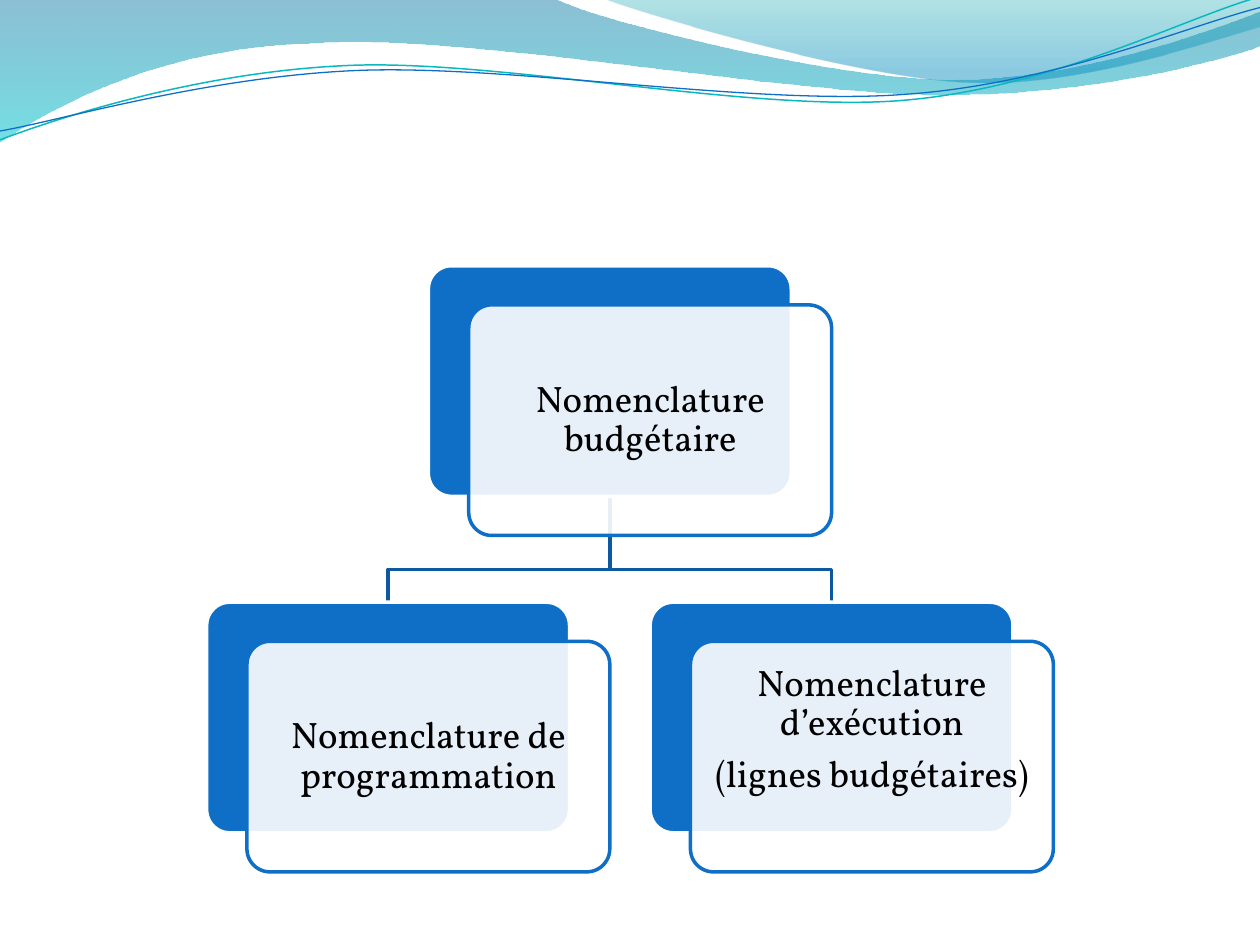
from lxml.etree import Element, SubElement
from pptx import Presentation
from pptx.dml.color import RGBColor
from pptx.enum.shapes import MSO_SHAPE
from pptx.enum.text import MSO_ANCHOR, PP_ALIGN
from pptx.oxml.ns import qn
from pptx.util import Inches, Pt

BLUE, WHITE, BLACK, BRANCH = "0F6FC6", "FFFFFF", "000000", "0C599F"
CARD_WIDTH, CARD_HEIGHT = 2.88, 1.83
OFFSET_X, OFFSET_Y = 0.32, 0.31

BANDS = [
    ([[(0, 0)], [(4.4, -0.01)],
      [(4.76, 0.17), (6.64, 0.63), (7.58, 0.63)],
      [(8.53, 0.63), (9.58, 0.26), (10, 0.09)], [(10.01, 0.36)],
      [(9.83, 0.44), (8.7, 0.76), (7.46, 0.75)],
      [(6.22, 0.75), (3.82, 0.28), (2.57, 0.34)],
      [(1.29, 0.36), (0.46, 0.83), (-0.01, 1.13)]],
     [(0, "0074A1", 45), (1, "00C6CF", 55)]),
    ([[(4.79, -0.01)],
      [(5.09, 0.11), (6.82, 0.62), (7.69, 0.65)],
      [(8.56, 0.69), (9.61, 0.32), (10, 0.21)], [(10, 0)]],
     [(0, "00A1A9", 30), (0.8, "008BBF", 45)]),
]
WAVES = [
    ([[(0, 1.11)],
      [(0.48, 0.93), (1.58, 0.57), (2.77, 0.52)],
      [(3.95, 0.47), (5.93, 0.89), (7.13, 0.8)],
      [(8.33, 0.71), (9.38, 0.15), (9.98, -0.02)]], "0AB8BF", 0.85),
    ([[(0, 1.04)],
      [(0.47, 0.96), (1.64, 0.61), (2.83, 0.56)],
      [(4.03, 0.51), (5.97, 0.84), (7.17, 0.75)],
      [(8.36, 0.67), (9.41, 0.21), (10, 0.06)]], BLUE, 0.75),
]
ROOT = (3.4, 2.11, ["Nomenclature budgétaire"], 0.09)
CHILDREN = [
    (5.16, 4.78, ["Nomenclature d’exécution", "(lignes budgétaires)"], 0.51),
    (1.64, 4.78, ["Nomenclature de programmation"], 0.09),
]


def color(value):
    return RGBColor.from_string(value)


def set_opacity(shape, percentages):
    for element, percent in zip(shape.element.iter(qn("a:srgbClr")), percentages):
        SubElement(element, qn("a:alpha")).set("val", str(percent * 1000))


def set_line(shape, value, width):
    shape.line.color.rgb = color(value)
    shape.line.width = Pt(width)


def bend_segments(shape, segments):
    lines = iter(list(shape.element.iter(qn("a:lnTo"))))
    for segment in segments[1:]:
        group = [next(lines) for _ in segment]
        if len(group) == 3:
            curve = Element(qn("a:cubicBezTo"))
            group[0].addprevious(curve)
            for line in group:
                curve.append(line[0])
                line.getparent().remove(line)


def add_outline(slide, segments, close=False):
    points = [(Inches(x), Inches(y)) for segment in segments for x, y in segment]
    builder = slide.shapes.build_freeform(*points[0])
    builder.add_line_segments(points[1:], close=close)
    shape = builder.convert_to_shape()
    bend_segments(shape, segments)
    shape.shadow.inherit = False
    return shape


def add_band(slide, segments, stops):
    shape = add_outline(slide, segments, close=True)
    shape.line.fill.background()
    shape.fill.gradient()
    shape.fill.gradient_angle = 270
    for stop, (position, value, _) in zip(shape.fill.gradient_stops, stops):
        stop.position = position
        stop.color.rgb = color(value)
    set_opacity(shape, [opacity for _, _, opacity in stops])


def add_stroke(slide, segments, value, width):
    shape = add_outline(slide, segments)
    shape.fill.background()
    set_line(shape, value, width)


def add_panel(slide, box, fill, line, opacity=100):
    shape = slide.shapes.add_shape(MSO_SHAPE.ROUNDED_RECTANGLE, *box)
    shape.adjustments[0] = 0.1
    shape.shadow.inherit = False
    shape.fill.solid()
    shape.fill.fore_color.rgb = color(fill)
    if opacity < 100:
        set_opacity(shape, [opacity])
    set_line(shape, line, 2)


def add_label(slide, box, lines, bottom_margin):
    frame = slide.shapes.add_textbox(*box).text_frame
    frame.word_wrap = True
    frame.vertical_anchor = MSO_ANCHOR.MIDDLE
    frame.margin_left = frame.margin_right = frame.margin_top = Inches(0.09)
    frame.margin_bottom = Inches(bottom_margin)
    frame.text = "\n".join(lines)
    for paragraph in frame.paragraphs:
        paragraph.alignment = PP_ALIGN.CENTER
        paragraph.line_spacing = 0.9
        paragraph.space_after = Pt(7)
        for run in paragraph.runs:
            run.font.name = "Vollkorn"
            run.font.size = Pt(21)
            run.font.color.rgb = color(BLACK)


def add_card(slide, left, top, lines, bottom_margin):
    size = (Inches(CARD_WIDTH), Inches(CARD_HEIGHT))
    front = (Inches(left + OFFSET_X), Inches(top + OFFSET_Y), *size)
    add_panel(slide, (Inches(left), Inches(top), *size), BLUE, WHITE)
    add_panel(slide, front, WHITE, BLUE, opacity=90)
    add_label(slide, front, lines, bottom_margin)


def main():
    presentation = Presentation()
    presentation.slide_width, presentation.slide_height = Inches(10), Inches(7.5)
    slide = presentation.slides.add_slide(presentation.slide_layouts[6])
    for segments, stops in BANDS:
        add_band(slide, segments, stops)
    for segments, value, width in WAVES:
        add_stroke(slide, segments, value, width)
    root_x, root_bottom = ROOT[0] + CARD_WIDTH / 2, ROOT[1] + CARD_HEIGHT
    for left, top, _, _ in CHILDREN:
        child_x, bend = left + CARD_WIDTH / 2, top - 0.26
        elbow = [[(root_x, root_bottom)], [(root_x, bend)], [(child_x, bend)], [(child_x, top)]]
        add_stroke(slide, elbow, BRANCH, 2)
    for card in [ROOT, *reversed(CHILDREN)]:
        add_card(slide, *card)
    presentation.save("out.pptx")


if __name__ == "__main__":
    main()
